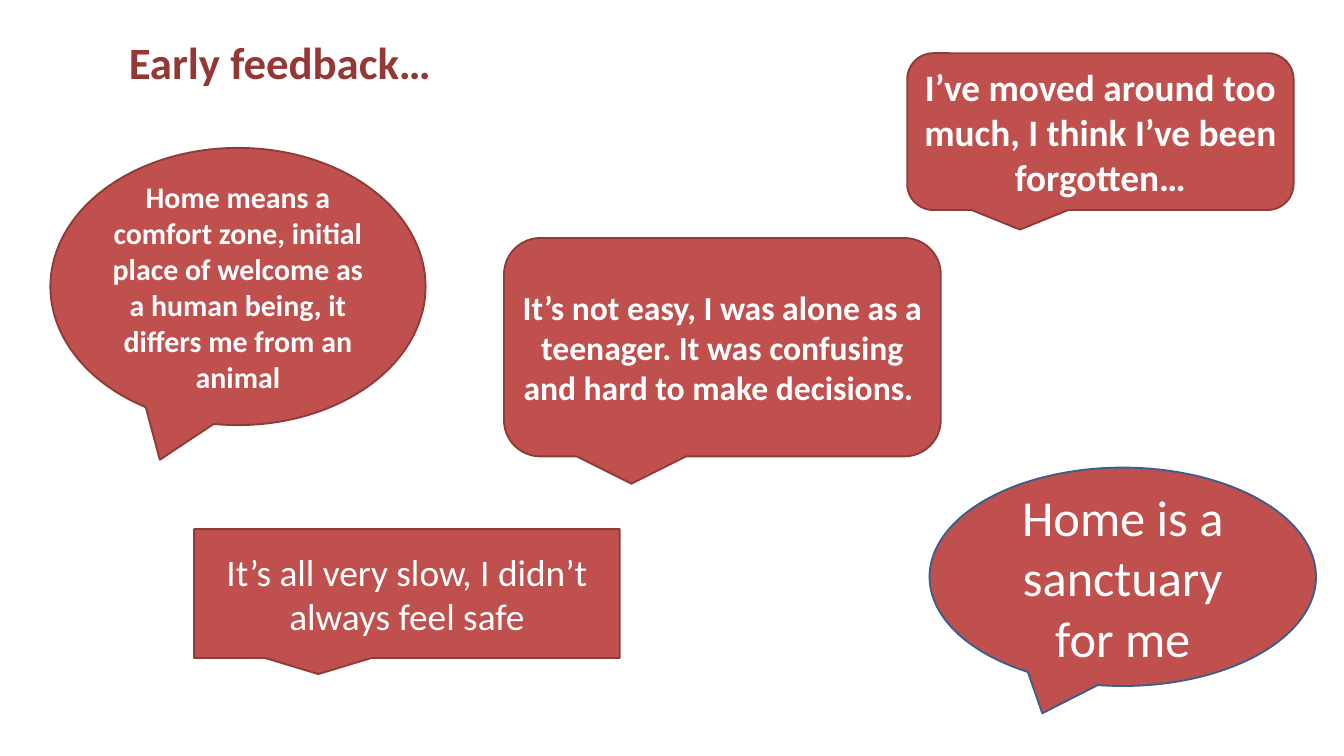
from dataclasses import dataclass

from pptx import Presentation
from pptx import util as u
from pptx.dml.color import RGBColor
from pptx.enum import shapes, text

COLOURS = {
    "title": "953735",
    "bubble": "C0504D",
    "red_line": "8E3B39",
    "blue_line": "3A5F8C",
    "white": "FFFFFF",
}
FONT = "Calibri"
ROUND = shapes.MSO_SHAPE.ROUNDED_RECTANGULAR_CALLOUT
OVAL = shapes.MSO_SHAPE.OVAL_CALLOUT
RECT = shapes.MSO_SHAPE.RECTANGULAR_CALLOUT


@dataclass
class Quote:
    kind: shapes.MSO_SHAPE
    box: tuple[float, float, float, float]
    words: str
    size: float
    bold: bool = True
    line: str = "red_line"


QUOTES = [
    Quote(ROUND, (972, 57, 414, 168),
          "I’ve moved around too much, I think I’ve been forgotten…", 40),
    Quote(OVAL, (54, 158.5, 402, 297),
          "Home means a comfort zone, initial place of welcome as a human being, "
          "it differs me from an animal", 32),
    Quote(ROUND, (540, 255, 468, 234),
          "It’s not easy, I was alone as a teenager. It was confusing and hard "
          "to make decisions. ", 36),
    Quote(RECT, (208, 567, 456, 138),
          "It’s all very slow, I didn’t always feel safe", 40, bold=False),
    Quote(OVAL, (996, 501, 414, 234),
          "Home is a sanctuary for me", 54, bold=False, line="blue_line"),
]


def rgb(name: str) -> RGBColor:
    return RGBColor.from_string(COLOURS[name])


def write(sp, words: str, size: float, colour: str, bold: bool) -> None:
    tf = sp.text_frame
    tf.word_wrap = True
    tf.auto_size = text.MSO_AUTO_SIZE.NONE
    tf.vertical_anchor = text.MSO_ANCHOR.MIDDLE
    p = tf.paragraphs[0]
    p.alignment = text.PP_ALIGN.CENTER
    r = p.add_run()
    r.text = words
    r.font.name = FONT
    r.font.size = u.Pt(size)
    r.font.bold = bold
    r.font.color.rgb = rgb(colour)


def draw_title(s, words: str) -> None:
    sp = s.shapes.title
    sp.left, sp.top, sp.width, sp.height = map(u.Pt, (36, 21.5, 528, 90))
    write(sp, words, 48, "title", True)


def draw_quote(s, quote: Quote) -> None:
    sp = s.shapes.add_shape(quote.kind, *map(u.Pt, quote.box))
    sp.shadow.inherit = False
    sp.fill.solid()
    sp.fill.fore_color.rgb = rgb("bubble")
    sp.line.color.rgb = rgb(quote.line)
    sp.line.width = u.Pt(2)
    write(sp, quote.words, quote.size, "white", quote.bold)


def main() -> None:
    prs = Presentation()
    prs.slide_width, prs.slide_height = u.Pt(1440), u.Pt(810)
    s = prs.slides.add_slide(prs.slide_layouts[5])
    draw_title(s, "Early feedback…")
    for quote in QUOTES:
        draw_quote(s, quote)
    prs.save("out.pptx")


if __name__ == "__main__":
    main()
